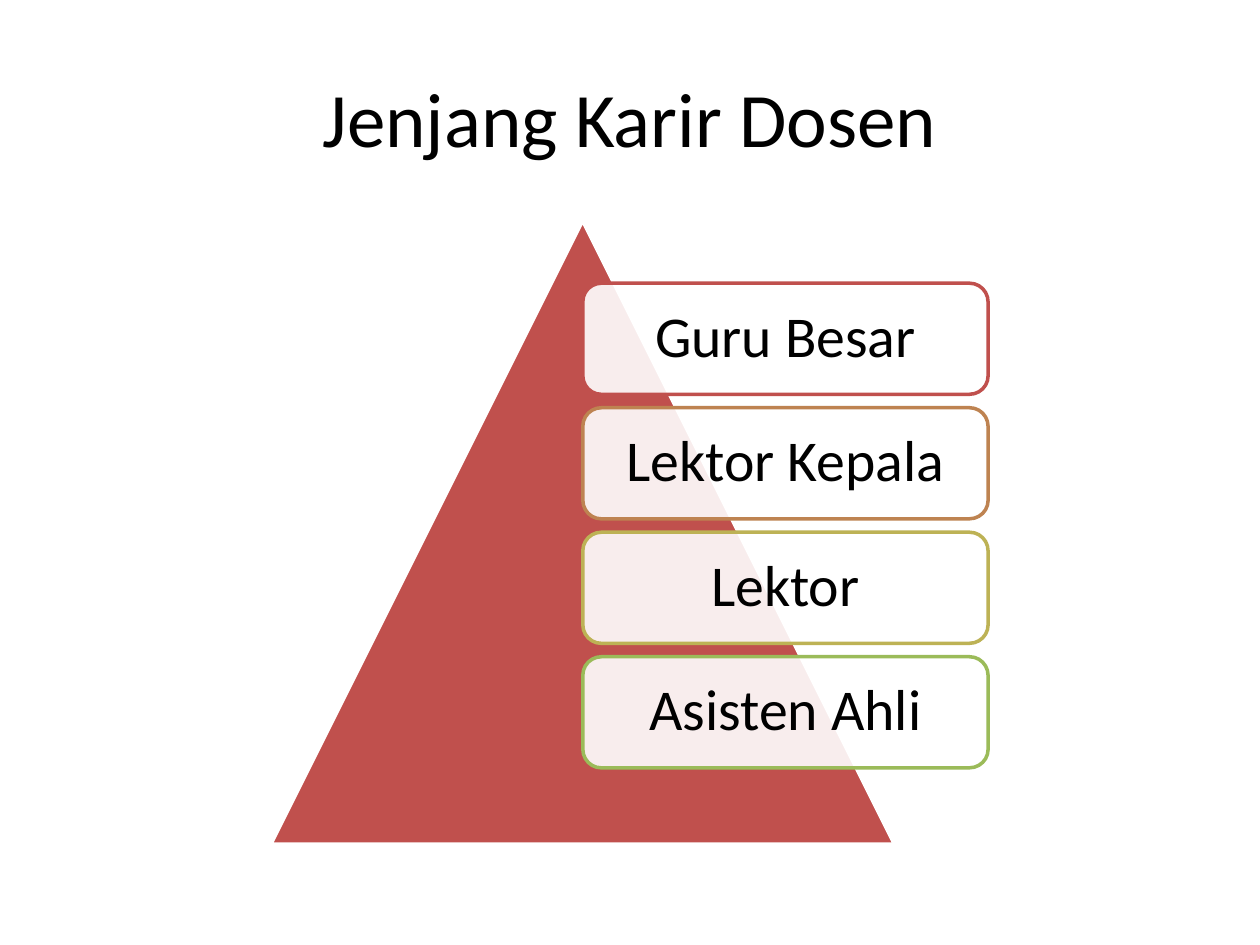
import pptx
import pptx.dml.color
import pptx.enum.shapes
import pptx.enum.text
import pptx.oxml.ns
import pptx.util
from lxml import etree
from pptx.util import Cm

COLORS = {
    "text": "000000",
    "white": "FFFFFF",
    "pyramid": "C0504D",
}
RANKS = [
    ("Guru Besar", "C0504D"),
    ("Lektor Kepala", "BE8351"),
    ("Lektor", "BDB255"),
    ("Asisten Ahli", "9BBB59"),
]


def format_text(text_frame, size):
    text_frame.word_wrap = True
    text_frame.vertical_anchor = pptx.enum.text.MSO_ANCHOR.MIDDLE
    paragraph = text_frame.paragraphs[0]
    paragraph.alignment = pptx.enum.text.PP_ALIGN.CENTER
    font = paragraph.runs[0].font
    font.name = "Calibri"
    font.size = pptx.util.Pt(size)
    font.color.rgb = pptx.dml.color.RGBColor.from_string(COLORS["text"])


def add_outlined_shape(kind, left, top, width, height, fill, line):
    shape = slide.shapes.add_shape(kind, left, top, width, height)
    shape.shadow.inherit = False
    shape.fill.solid()
    shape.fill.fore_color.rgb = pptx.dml.color.RGBColor.from_string(fill)
    shape.line.color.rgb = pptx.dml.color.RGBColor.from_string(line)
    shape.line.width = pptx.util.Pt(2)
    return shape


presentation = pptx.Presentation()
presentation.slide_width = Cm(25.4)
presentation.slide_height = Cm(19.05)
slide = presentation.slides.add_slide(presentation.slide_layouts[5])

# Title
title = slide.shapes.title
title.left, title.top, title.width, title.height = Cm(1.27), Cm(0.76), Cm(22.86), Cm(3.18)
title.text_frame.text = "Jenjang Karir Dosen"
format_text(title.text_frame, 44)

# Pyramid
add_outlined_shape(
    pptx.enum.shapes.MSO_SHAPE.ISOSCELES_TRIANGLE,
    Cm(5.46), Cm(4.45), Cm(12.57), Cm(12.57),
    COLORS["pyramid"], COLORS["white"],
)

# Rank boxes, highest rank first
for index, (rank, outline) in enumerate(RANKS):
    box = add_outlined_shape(
        pptx.enum.shapes.MSO_SHAPE.ROUNDED_RECTANGLE,
        Cm(11.75), Cm(5.71 + 2.51 * index), Cm(8.17), Cm(2.24),
        COLORS["white"], outline,
    )
    # Let the pyramid show faintly through the box
    fill_color = box.fill._xPr.find(".//" + pptx.oxml.ns.qn("a:srgbClr"))
    etree.SubElement(fill_color, pptx.oxml.ns.qn("a:alpha"), val="90000")

    text_frame = box.text_frame
    text_frame.text = rank
    format_text(text_frame, 33)
    text_frame.paragraphs[0].line_spacing = 0.9
    text_frame.margin_left = text_frame.margin_right = Cm(0.36)
    text_frame.margin_top = text_frame.margin_bottom = Cm(0.36)

presentation.save("out.pptx")
